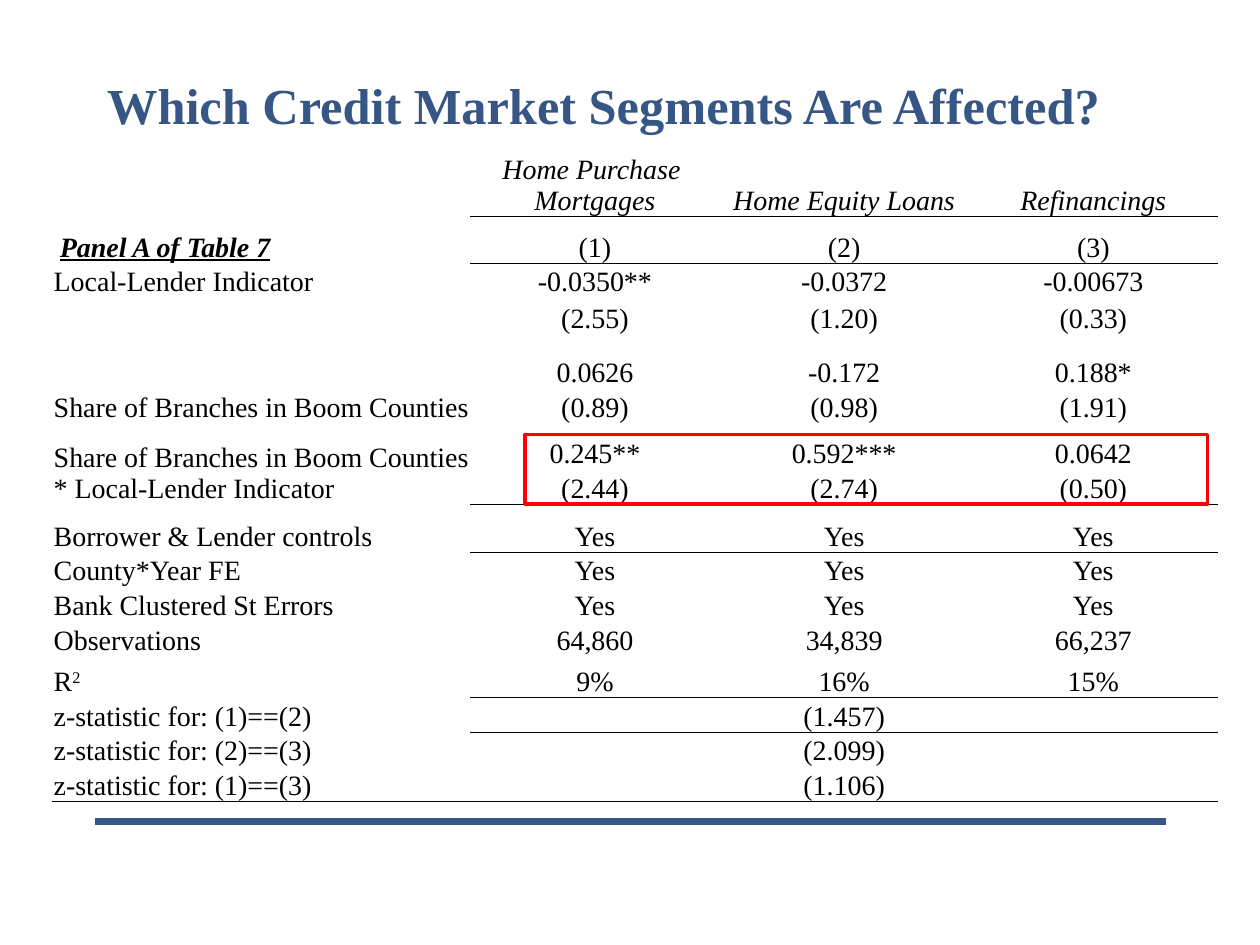
from dataclasses import dataclass

from lxml import etree
from pptx import Presentation
from pptx.dml.color import RGBColor
from pptx.enum.shapes import MSO_CONNECTOR, MSO_SHAPE
from pptx.enum.text import MSO_ANCHOR, PP_ALIGN
from pptx.oxml.ns import qn
from pptx.util import Pt

LEFT, CENTER = PP_ALIGN.LEFT, PP_ALIGN.CENTER
MIDDLE, BOTTOM = MSO_ANCHOR.MIDDLE, MSO_ANCHOR.BOTTOM
LINE, RECT = MSO_CONNECTOR.STRAIGHT, MSO_SHAPE.RECTANGLE
PLAIN = "{2D5ABB26-0587-4C30-8999-92F81FD0307C}"


@dataclass(frozen=True)
class Theme:
    """Hold the colours, font and type sizes."""
    blue: str = "365686"
    black: str = "000000"
    white: str = "FFFFFF"
    red: str = "FF0000"
    font: str = "Times New Roman"
    title: float = 28.8
    body: float = 16
    small: float = 14


THEME = Theme()
SHARE = "Share of Branches in Boom Counties"
YES = ["Yes"] * 3
ROWS = [
    ["", "Home Purchase \nMortgages", "Home Equity Loans", "Refinancings"],
    ["Panel A of Table 7", "(1)", "(2)", "(3)"],
    ["Local-Lender Indicator", "-0.0350**", "-0.0372", "-0.00673"],
    ["", "(2.55)", "(1.20)", "(0.33)"],
    [SHARE, "0.0626", "-0.172", "0.188*"],
    ["", "(0.89)", "(0.98)", "(1.91)"],
    [SHARE + " * Local-Lender Indicator", "0.245**", "0.592***", "0.0642"],
    ["", "(2.44)", "(2.74)", "(0.50)"],
    ["Borrower & Lender controls", *YES],
    ["County*Year FE", *YES],
    ["Bank Clustered St Errors", *YES],
    ["Observations", "64,860", "34,839", "66,237"],
    ["R", "9%", "16%", "15%"],
    ["z-statistic for: (1)==(2)", "(1.457)", "", ""],
    ["z-statistic for: (2)==(3)", "(2.099)", "", ""],
    ["z-statistic for: (1)==(3)", "(1.106)", "", ""],
]
HEAD, PANEL, FIT, LAST = 0, 1, 12, 15
TALL = {0: 39.6, 1: 26.6, 4: 31, 6: 26.6, 8: 27.4, 12: 23.8}
ROW = 19.8
COLS = [238.8, 142.4, 142.4, 142.4]
PAIRS = (4, 6)
WIDE = (13, 14, 15)
RULED = (0, 7, 12)


def put(para, text, size=THEME.body, color=THEME.black, bold=False,
        italic=False, under=False, base=None):
    """Add formatted text to a paragraph, breaking it at newlines."""
    for i, part in enumerate(text.split("\n")):
        if i:
            para.add_line_break()
        run = para.add_run()
        run.text = part
        font = run.font
        font.name, font.size = THEME.font, Pt(size)
        font.bold, font.italic, font.underline = bold, italic, under
        font.color.rgb = RGBColor.from_string(color)
        if base:
            run._r.get_or_add_rPr().set("baseline", str(base))


def edge(cell, side):
    """Draw a thin black border on one side of a cell."""
    line = etree.Element(qn("a:ln" + side), w=str(Pt(0.5)))
    fill = etree.SubElement(line, qn("a:solidFill"))
    etree.SubElement(fill, qn("a:srgbClr"), val=THEME.black)
    cell._tc.get_or_add_tcPr().insert(0, line)


def fill_cell(cell, row, col):
    """Format one cell and write its text."""
    cell.fill.solid()
    cell.fill.fore_color.rgb = RGBColor.from_string(THEME.white)
    cell.vertical_anchor = BOTTOM
    cell.margin_left = cell.margin_right = cell.margin_top = Pt(0.72)
    cell.margin_bottom = 0
    para = cell.text_frame.paragraphs[0]
    para.alignment = CENTER if col else LEFT
    panel = (row, col) == (PANEL, 0)
    if panel:
        put(para, " ", size=THEME.small)
    put(para, ROWS[row][col], bold=panel, under=panel,
        italic=panel or row == HEAD)
    if (row, col) == (FIT, 0):
        put(para, "2", base=30000)
    if row == LAST or (col and row in RULED):
        edge(cell, "B")
    elif col and row - 1 in RULED:
        edge(cell, "T")


def add_grid(slide):
    """Add the table of regression results."""
    highs = [TALL.get(i, ROW) for i in range(len(ROWS))]
    frame = slide.shapes.add_table(len(ROWS), len(COLS), Pt(30), Pt(84.2),
                                   Pt(sum(COLS)), Pt(sum(highs)))
    grid = frame.table
    grid.first_row = grid.horz_banding = False
    grid._tbl.tblPr.find(qn("a:tableStyleId")).text = PLAIN
    for col, width in zip(grid.columns, COLS):
        col.width = Pt(width)
    for row, high in zip(grid.rows, highs):
        row.height = Pt(high)
    for i in PAIRS:
        grid.cell(i, 0).merge(grid.cell(i + 1, 0))
    for i in WIDE:
        grid.cell(i, 1).merge(grid.cell(i, 3))
    for i, row in enumerate(ROWS):
        for j in range(len(row)):
            fill_cell(grid.cell(i, j), i, j)


def add_title(slide, text):
    """Place and fill the title."""
    box = slide.shapes.title
    box.left, box.top, box.width, box.height = Pt(54), Pt(27.4), Pt(612), Pt(64)
    box.text_frame.vertical_anchor = MIDDLE
    para = box.text_frame.paragraphs[0]
    para.alignment = LEFT
    put(para, text, size=THEME.title, color=THEME.blue, bold=True)


def add_rule(slide):
    """Draw the blue line at the foot of the slide."""
    rule = slide.shapes.add_connector(LINE, Pt(54), Pt(469.4), Pt(666), Pt(469.4))
    rule.line.color.rgb = RGBColor.from_string(THEME.blue)
    rule.line.width = Pt(4)
    etree.SubElement(rule._element.spPr, qn("a:effectLst"))


def add_frame(slide):
    """Outline the key results in red."""
    box = slide.shapes.add_shape(RECT, Pt(300), Pt(248.2), Pt(390), Pt(39.8))
    box.shadow.inherit = False
    box.fill.background()
    box.line.color.rgb = RGBColor.from_string(THEME.red)
    box.line.width = Pt(2)


def main():
    """Build and save the slide."""
    deck = Presentation()
    deck.slide_width, deck.slide_height = Pt(720), Pt(540)
    slide = deck.slides.add_slide(deck.slide_layouts[5])
    add_rule(slide)
    add_title(slide, "Which Credit Market Segments Are Affected?")
    add_grid(slide)
    add_frame(slide)
    deck.save("out.pptx")


if __name__ == "__main__":
    main()
